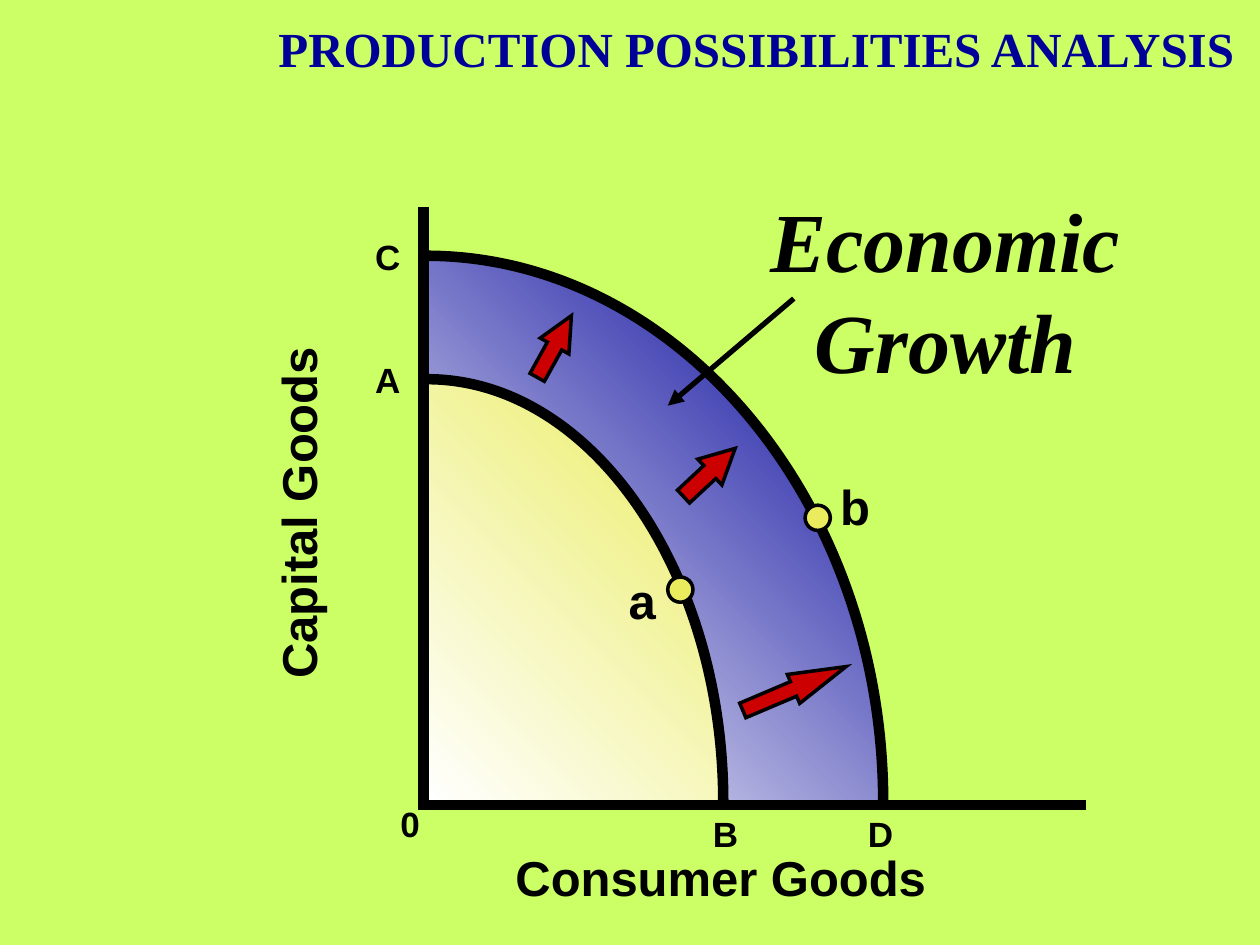
from dataclasses import dataclass

from lxml.etree import SubElement
from pptx import Presentation
from pptx.dml.color import RGBColor as RGB
from pptx.enum.shapes import MSO_CONNECTOR as CONN, MSO_SHAPE as SHAPE
from pptx.enum.text import MSO_ANCHOR as ANCHOR, MSO_AUTO_SIZE as AUTO, PP_ALIGN as ALIGN
from pptx.oxml.ns import qn
from pptx.util import Emu, Inches, Pt


@dataclass(frozen=True)
class Theme:
    back: RGB = RGB(0xCC, 0xFF, 0x66)
    navy: RGB = RGB(0x00, 0x00, 0x99)
    yellow: RGB = RGB(0xEA, 0xEC, 0x5E)
    red: RGB = RGB(0xCC, 0x00, 0x00)
    black: RGB = RGB(0x00, 0x00, 0x00)
    white: RGB = RGB(0xFF, 0xFF, 0xFF)
    serif: str = "Times New Roman"
    sans: str = "Arial"
    callout: int = 48
    large: int = 28
    small: int = 20
    heavy: float = 6
    medium: float = 3
    thin: float = 2


T = Theme()
COLUMNS, ROWS = 100, 75
WIDTH, HEIGHT = Inches(10), Inches(7.5)


@dataclass(frozen=True)
class Box:
    col: float
    row: float
    cols: float
    rows: float

    def emu(self) -> list[Emu]:
        return [across(self.col), down(self.row), across(self.cols), down(self.rows)]


@dataclass(frozen=True)
class Label:
    text: str
    box: Box
    size: int = T.small
    font: str = T.sans
    color: RGB = T.black
    align: ALIGN = ALIGN.LEFT
    italic: bool = False
    wrap: bool = False
    turn: float = 0


@dataclass(frozen=True)
class Frontier:
    box: Box
    color: RGB


@dataclass(frozen=True)
class Arrow:
    box: Box
    turn: float
    head: float


@dataclass(frozen=True)
class Line:
    start: tuple[float, float]
    end: tuple[float, float]
    weight: float = T.heavy


TITLE = Label("PRODUCTION POSSIBILITIES ANALYSIS", Box(21.1, 1, 78.5, 5.6),
              T.large, T.serif, T.navy)
GROWTH = Label("Economic Growth", Box(52, 14.5, 46.1, 17), T.callout, T.serif,
               align=ALIGN.CENTER, italic=True, wrap=True)
LABELS = [
    Label("A", Box(28.8, 28, 4, 4.3)),
    Label("B", Box(55.6, 64, 4, 4.3)),
    Label("C", Box(28.8, 18.2, 4, 4.3)),
    Label("D", Box(67.9, 64, 4, 4.3)),
    Label("0", Box(30.8, 63.2, 3.5, 4.3)),
    Label("a", Box(48.9, 44.8, 4.1, 5.6), T.large),
    Label("b", Box(65.7, 37.3, 4.4, 5.6), T.large),
    Label("Capital Goods", Box(9.4, 37.9, 28.4, 5.6), T.large, align=ALIGN.CENTER, turn=270),
    Label("Consumer Goods", Box(39.9, 66.8, 34.6, 5.6), T.large, align=ALIGN.CENTER),
]
OUTER = Frontier(Box(33.8, 20.3, 36.3, 43.4), T.navy)
INNER = Frontier(Box(33.9, 30.1, 23.5, 33.6), T.yellow)
POINTS = [Box(53, 45.8, 2, 2), Box(63.9, 40.1, 2, 2)]
ARROWS = [
    Arrow(Box(58.6, 53.4, 8.9, 2.5), 337, 1.81),
    Arrow(Box(53.5, 36.1, 5.6, 2.8), 317, 0.98),
    Arrow(Box(41.2, 26.2, 5.6, 2.6), 299, 1.06),
]
AXES = [Line((33.6, 16.4), (33.6, 64.3)), Line((33.2, 63.9), (86.2, 63.9))]
POINTER = Line((63, 23.7), (53, 32.2), T.medium)


def across(cols: float) -> Emu:
    return Emu(round(WIDTH * cols / COLUMNS))


def down(rows: float) -> Emu:
    return Emu(round(HEIGHT * rows / ROWS))


def outline(sp, weight: float):
    sp.line.color.rgb = T.black
    sp.line.width = Pt(weight)
    ln = sp._element.spPr.find(qn("a:ln"))
    SubElement(ln, qn("a:miter"), lim="800000")
    return ln


def write(sp, label: Label) -> None:
    sp.left, sp.top, sp.width, sp.height = label.box.emu()
    sp.rotation = label.turn
    tf = sp.text_frame
    tf.text = label.text
    tf.word_wrap = label.wrap
    tf.auto_size = AUTO.SHAPE_TO_FIT_TEXT
    tf.vertical_anchor = ANCHOR.TOP
    p = tf.paragraphs[0]
    p.alignment = label.align
    font = p.runs[0].font
    font.name, font.size, font.color.rgb = label.font, Pt(label.size), label.color
    font.bold, font.italic = True, label.italic


def add_label(shapes, label: Label) -> None:
    write(shapes.add_textbox(*label.box.emu()), label)


def add_frontier(shapes, frontier: Frontier) -> None:
    left, top, width, height = frontier.box.emu()
    builder = shapes.build_freeform(left, top)
    builder.add_line_segments([(left + width, top + height), (left, top + height)])
    sp = builder.convert_to_shape()
    sp.shadow.inherit = False
    paths = sp._element.spPr.find(".//" + qn("a:pathLst"))
    paths.clear()
    arc = [(width * 0.55, 0), (width, height * 0.45), (width, height)]
    steps = [("moveTo", [(0, 0)]), ("cubicBezTo", arc)]
    region = steps + [("lnTo", [(0, height)]), ("close", [])]
    for hidden, commands in (({"fill": "none"}, steps), ({"stroke": "0"}, region)):
        path = SubElement(paths, qn("a:path"), w=str(width), h=str(height), **hidden)
        for name, points in commands:
            command = SubElement(path, qn("a:" + name))
            for x, y in points:
                SubElement(command, qn("a:pt"), x=str(round(x)), y=str(round(y)))
    sp.fill.gradient()
    sp.fill.gradient_angle = 45
    for stop, color, position in zip(sp.fill.gradient_stops, (T.white, frontier.color), (0, 1)):
        stop.color.rgb = color
        stop.position = position
    outline(sp, T.heavy)


def add_preset(shapes, kind: SHAPE, box: Box, color: RGB):
    sp = shapes.add_shape(kind, *box.emu())
    sp.shadow.inherit = False
    sp.fill.solid()
    sp.fill.fore_color.rgb = color
    outline(sp, T.thin)
    return sp


def add_arrow(shapes, arrow: Arrow) -> None:
    sp = add_preset(shapes, SHAPE.RIGHT_ARROW, arrow.box, T.red)
    sp.adjustments[0], sp.adjustments[1] = 0.5, arrow.head
    sp.rotation = arrow.turn


def add_line(shapes, line: Line, pointed: bool = False) -> None:
    (x1, y1), (x2, y2) = line.start, line.end
    sp = shapes.add_connector(CONN.STRAIGHT, across(x1), down(y1), across(x2), down(y2))
    ln = outline(sp, line.weight)
    if pointed:
        SubElement(ln, qn("a:tailEnd"), type="triangle")
    SubElement(sp._element.spPr, qn("a:effectLst"))


def main() -> None:
    prs = Presentation()
    prs.slide_width, prs.slide_height = WIDTH, HEIGHT
    s = prs.slides.add_slide(prs.slide_layouts[5])
    s.background.fill.solid()
    s.background.fill.fore_color.rgb = T.back
    write(s.shapes.title, TITLE)
    add_frontier(s.shapes, OUTER)
    add_label(s.shapes, GROWTH)
    add_frontier(s.shapes, INNER)
    for box in POINTS:
        add_preset(s.shapes, SHAPE.OVAL, box, T.yellow)
    arrows = s.shapes.add_group_shape().shapes
    for arrow in ARROWS:
        add_arrow(arrows, arrow)
    for label in LABELS:
        add_label(s.shapes, label)
    axes = s.shapes.add_group_shape().shapes
    for axis in AXES:
        add_line(axes, axis)
    add_line(s.shapes, POINTER, pointed=True)
    prs.save("out.pptx")


if __name__ == "__main__":
    main()
